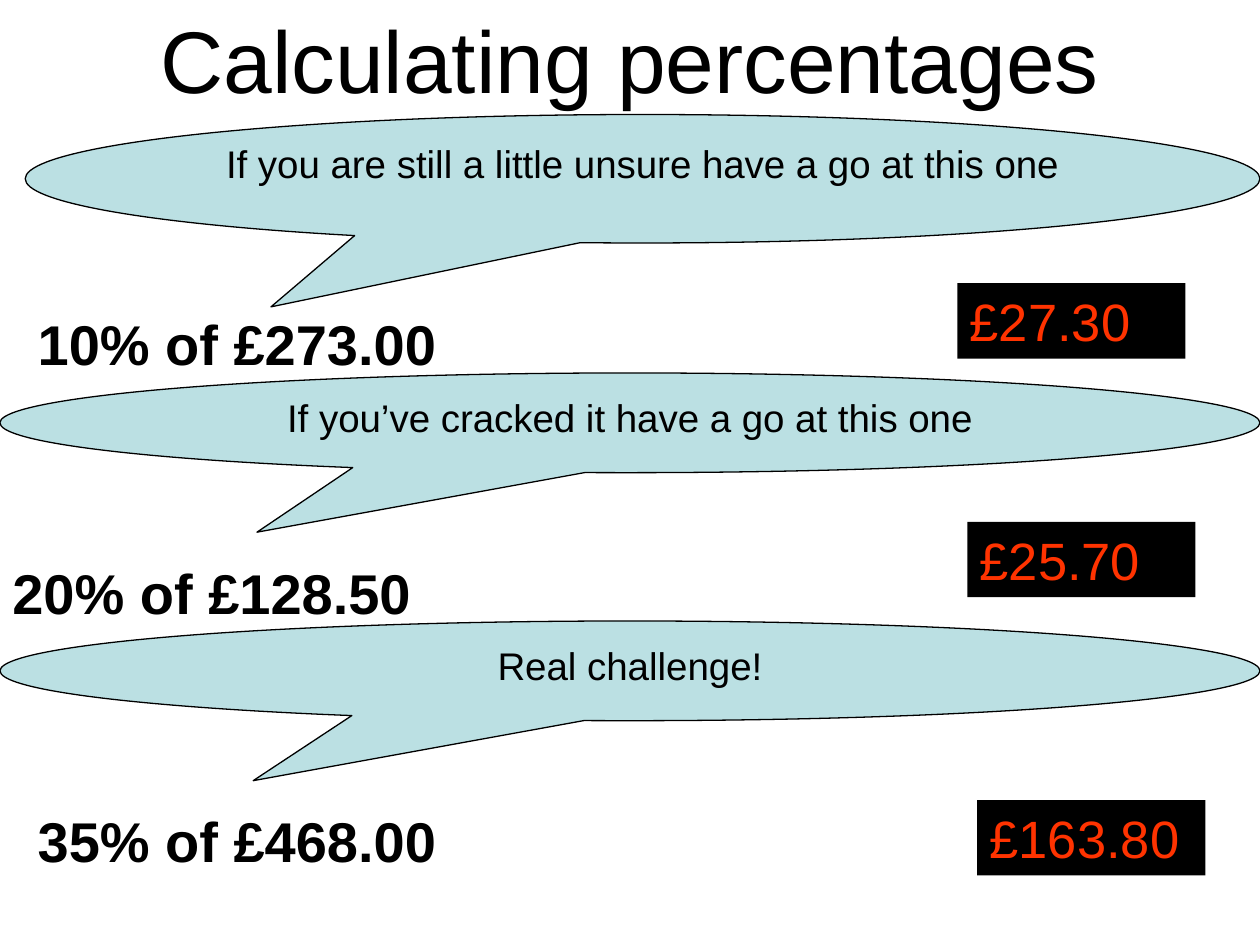
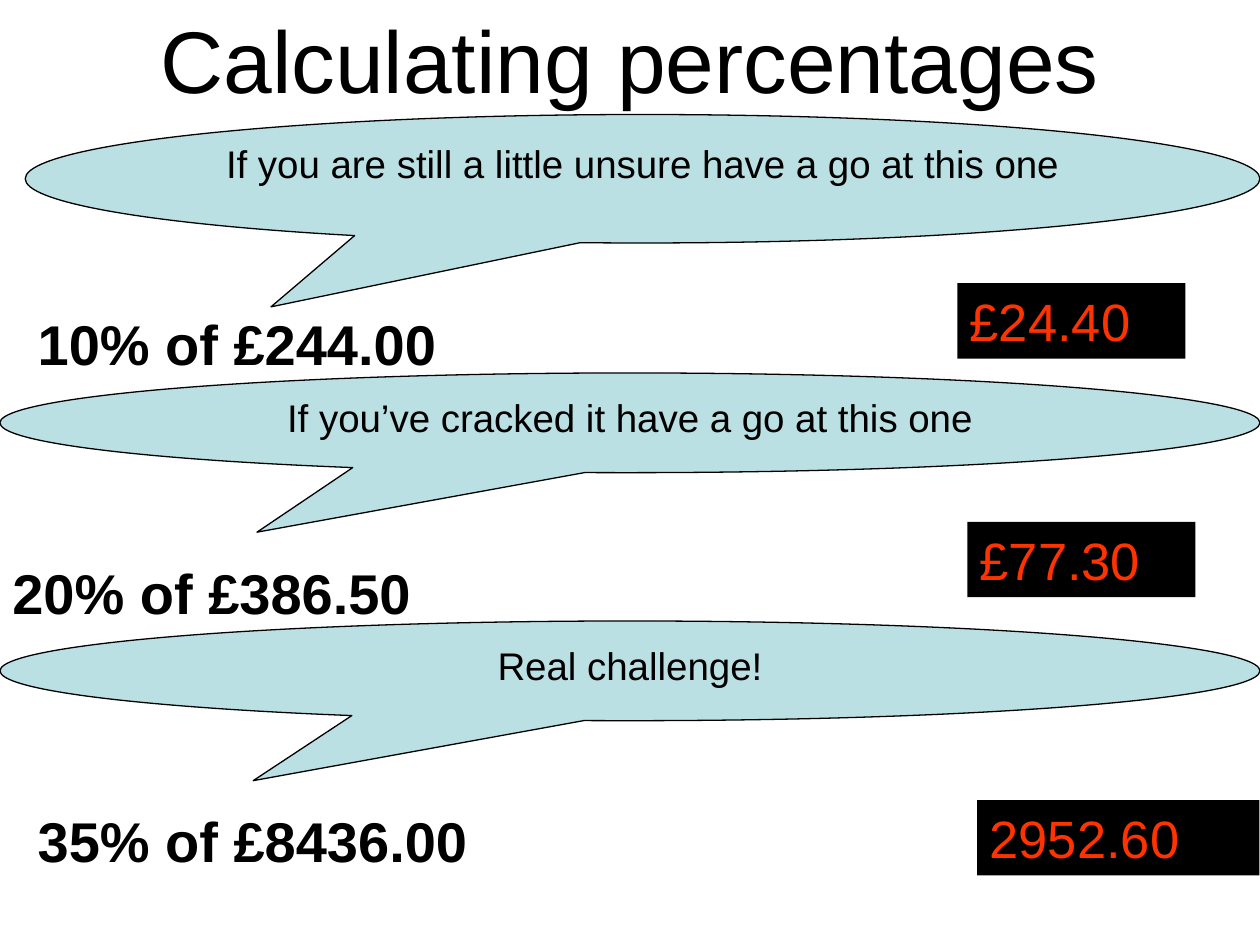
from collections import namedtuple

from lxml import etree
from pptx import Presentation
from pptx.dml.color import RGBColor
from pptx.enum.shapes import MSO_SHAPE
from pptx.enum.text import MSO_ANCHOR, PP_ALIGN
from pptx.oxml.ns import qn
from pptx.util import Cm, Pt

CALLOUT = MSO_SHAPE.OVAL_CALLOUT
RECTANGLE = MSO_SHAPE.RECTANGLE
TOP = MSO_ANCHOR.TOP
LEFT = PP_ALIGN.LEFT
CENTER = PP_ALIGN.CENTER

FONT = "Arial"
BLACK = "000000"
WHITE = "FFFFFF"
PALE_BLUE = "BBE0E3"
ORANGE = "FF3300"

PAGE_WIDTH, PAGE_HEIGHT = 25.4, 19.05
QUESTION_SIZE = 11.81, 1.63
ANSWER_HEIGHT = 1.52
ANSWER_WIDTH = 4.6
FIRST_ANSWER_LEFT, ANSWER_STEP = 19.3, 0.2

Level = namedtuple("Level", "prompt left top height tail question_left question_drop answer_drop")
LEVELS = [
    Level("If you are still a little unsure have a go at this one",
          0.51, 2.31, 2.59, (-0.301, 0.997), 0.51, 3.81, 3.4),
    Level("If you’ve cracked it have a go at this one",
          0, 7.52, 2.01, (-0.296, 1.097), 0, 3.61, 3),
    Level("Real challenge!",
          0, 12.52, 2.01, (-0.299, 1.101), 0.51, 3.61, 3.61),
]

EXERCISES = [
    [("10% of £273.00", "£27.30", ANSWER_WIDTH),
     ("20% of £128.50", "£25.70", ANSWER_WIDTH),
     ("35% of £468.00", "£163.80", ANSWER_WIDTH)],
    [("10% of £244.00", "£24.40", ANSWER_WIDTH),
     ("20% of £386.50", "£77.30", ANSWER_WIDTH),
     ("35% of £8436.00", "2952.60", 5.69)],
]


def colour(value):
    return RGBColor.from_string(value)


def write(shape, text, size, ink=BLACK, bold=False, align=LEFT, before=0):
    frame = shape.text_frame
    frame.word_wrap = True
    frame.vertical_anchor = TOP
    para = frame.paragraphs[0]
    para.alignment = align
    if before:
        spacing = etree.SubElement(para._p.get_or_add_pPr(), qn("a:spcBef"))
        etree.SubElement(spacing, qn("a:spcPct")).set("val", str(before * 1000))
    span = para.add_run()
    span.text = text
    span.font.name = FONT
    span.font.size = Pt(size)
    span.font.bold = bold
    span.font.color.rgb = colour(ink)


def add_text(page, box, text, **style):
    write(page.shapes.add_textbox(*map(Cm, box)), text, **style)


def add_panel(page, kind, box, fill, text, outline=None, **style):
    panel = page.shapes.add_shape(kind, *map(Cm, box))
    panel.shadow.inherit = False
    panel.fill.solid()
    panel.fill.fore_color.rgb = colour(fill)
    if outline:
        panel.line.color.rgb = colour(outline)
        panel.line.width = Pt(0.75)
    else:
        panel.line.fill.background()
    write(panel, text, **style)
    return panel


def add_level(page, level, question, answer, answer_left, answer_width):
    callout_box = level.left, level.top, PAGE_WIDTH - level.left, level.height
    callout = add_panel(page, CALLOUT, callout_box, PALE_BLUE, level.prompt,
                        outline=BLACK, size=22, align=CENTER)
    for index, value in enumerate(level.tail):
        callout.adjustments[index] = value
    question_box = level.question_left, level.top + level.question_drop, *QUESTION_SIZE
    add_text(page, question_box, question, size=32, bold=True, before=50)
    answer_box = answer_left, level.top + level.answer_drop, answer_width, ANSWER_HEIGHT
    add_panel(page, RECTANGLE, answer_box, BLACK, answer, size=30, ink=ORANGE, before=50)


def add_exercise_page(deck, exercises):
    page = deck.slides.add_slide(deck.slide_layouts[6])
    page.background.fill.solid()
    page.background.fill.fore_color.rgb = colour(WHITE)
    add_text(page, (0, 0, PAGE_WIDTH, PAGE_HEIGHT), "Calculating percentages",
             size=50, align=CENTER, before=20)
    for index, (level, (question, answer, width)) in enumerate(zip(LEVELS, exercises)):
        answer_left = FIRST_ANSWER_LEFT + index * ANSWER_STEP
        add_level(page, level, question, answer, answer_left, width)


def main():
    deck = Presentation()
    deck.slide_width = Cm(PAGE_WIDTH)
    deck.slide_height = Cm(PAGE_HEIGHT)
    for exercises in EXERCISES:
        add_exercise_page(deck, exercises)
    deck.save("out.pptx")


if __name__ == "__main__":
    main()
